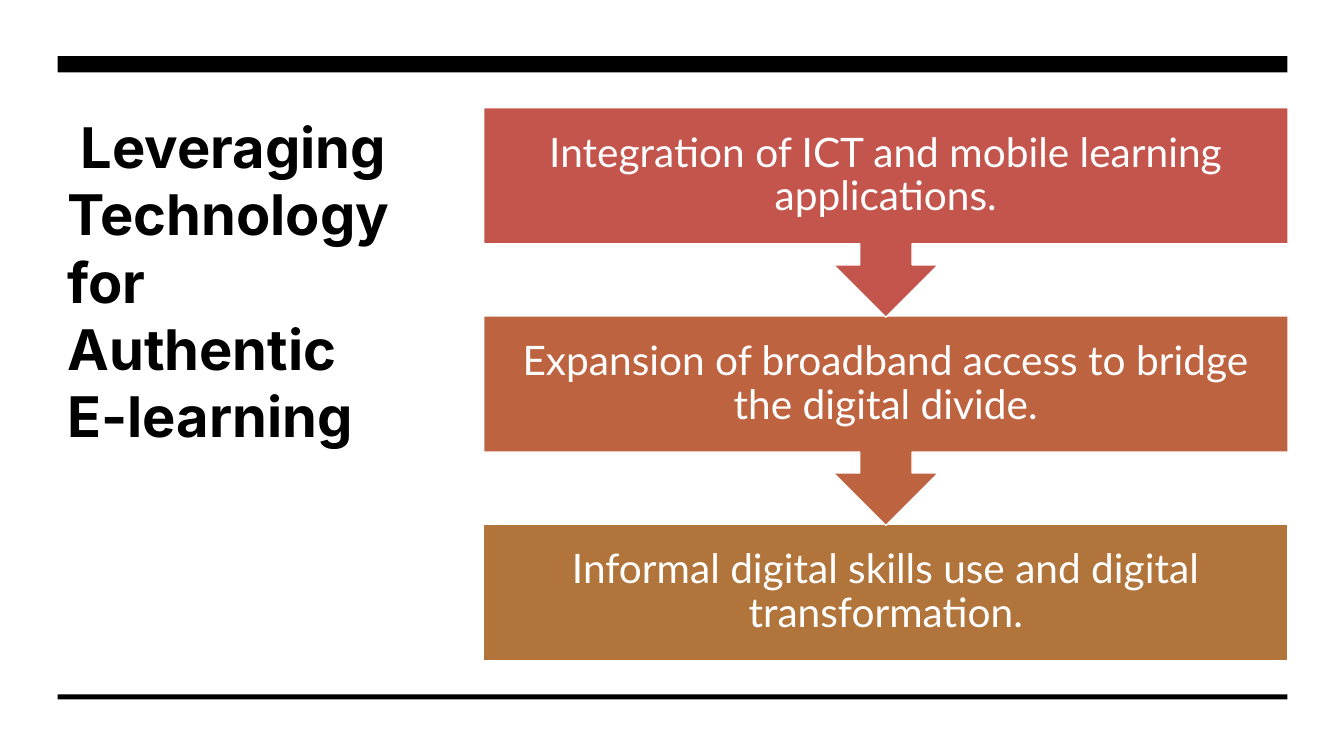
from dataclasses import dataclass

from pptx import Presentation
from pptx.dml.color import RGBColor
from pptx.enum.shapes import MSO_SHAPE as Kind
from pptx.enum.text import MSO_ANCHOR as Anchor, PP_ALIGN as Align
from pptx.shapes.autoshape import Shape
from pptx.slide import Slide
from pptx.text.text import TextFrame
from pptx.util import Pt

WHITE = RGBColor(0xFF, 0xFF, 0xFF)
BLACK = RGBColor(0x00, 0x00, 0x00)
RED = RGBColor(0xC3, 0x55, 0x4D)
RUST = RGBColor(0xBE, 0x63, 0x40)
OCHRE = RGBColor(0xB1, 0x75, 0x3B)

# Layout in points
EDGE, SPAN = 41.2, 878.4
TOP = 77.0
LEFT, WIDTH = 345.6, 574.4
BODY, FULL = 97.2, 149.6
PITCH = 148.7
INSET = 16.5


@dataclass
class Bar:
    top: float
    height: float


@dataclass
class Step:
    text: str
    color: RGBColor


BARS = [Bar(40.2, 11.5), Bar(496, 3.6)]
STEPS = [
    Step("Integration of ICT and mobile learning applications.", RED),
    Step("Expansion of broadband access to bridge the digital divide.", RUST),
    Step("Informal digital skills use and digital transformation.", OCHRE),
]


def add_run(frame: TextFrame, text: str, font: str, size: float,
            color: RGBColor, bold: bool = False) -> None:
    run = frame.paragraphs[0].add_run()
    run.text = text
    run.font.name = font
    run.font.size = Pt(size)
    run.font.bold = bold
    run.font.color.rgb = color


def add_block(slide: Slide, kind: Kind, left: float, top: float,
              width: float, height: float, color: RGBColor) -> Shape:
    shape = slide.shapes.add_shape(
        kind, Pt(left), Pt(top), Pt(width), Pt(height))
    shape.shadow.inherit = False
    shape.fill.solid()
    shape.fill.fore_color.rgb = color
    shape.line.fill.background()
    return shape


def add_title(slide: Slide, text: str) -> None:
    box = slide.shapes.add_textbox(Pt(EDGE), Pt(TOP), Pt(248.4), Pt(320.4))
    frame = box.text_frame
    frame.word_wrap = True
    add_run(frame, text, "Inter", 40, BLACK, bold=True)


def add_step(slide: Slide, step: Step, top: float, last: bool) -> None:
    kind = Kind.RECTANGLE if last else Kind.DOWN_ARROW_CALLOUT
    height = BODY if last else FULL
    shape = add_block(slide, kind, LEFT, top, WIDTH, height, step.color)
    shape.line.color.rgb = WHITE
    shape.line.width = Pt(1)
    frame = shape.text_frame
    frame.word_wrap = True
    frame.vertical_anchor = Anchor.MIDDLE
    frame.margin_left = frame.margin_right = Pt(INSET)
    frame.margin_top = frame.margin_bottom = Pt(INSET)
    para = frame.paragraphs[0]
    para.alignment = Align.CENTER
    para.line_spacing = 0.9
    add_run(frame, step.text, "Lato", 29, WHITE)


def main() -> None:
    deck = Presentation()
    deck.slide_width, deck.slide_height = Pt(960), Pt(540)
    slide = deck.slides.add_slide(deck.slide_layouts[6])
    slide.background.fill.solid()
    slide.background.fill.fore_color.rgb = WHITE

    # Title, led by a no-break space
    add_title(slide, " Leveraging Technology for Authentic E-learning")

    # Top and bottom rules
    for bar in BARS:
        add_block(slide, Kind.RECTANGLE, EDGE, bar.top, SPAN, bar.height, BLACK)

    # Steps from the bottom up, so each arrow tip lies over the next box
    end = len(STEPS) - 1
    for i, step in reversed(list(enumerate(STEPS))):
        add_step(slide, step, TOP + i * PITCH, i == end)

    deck.save("out.pptx")


if __name__ == "__main__":
    main()
